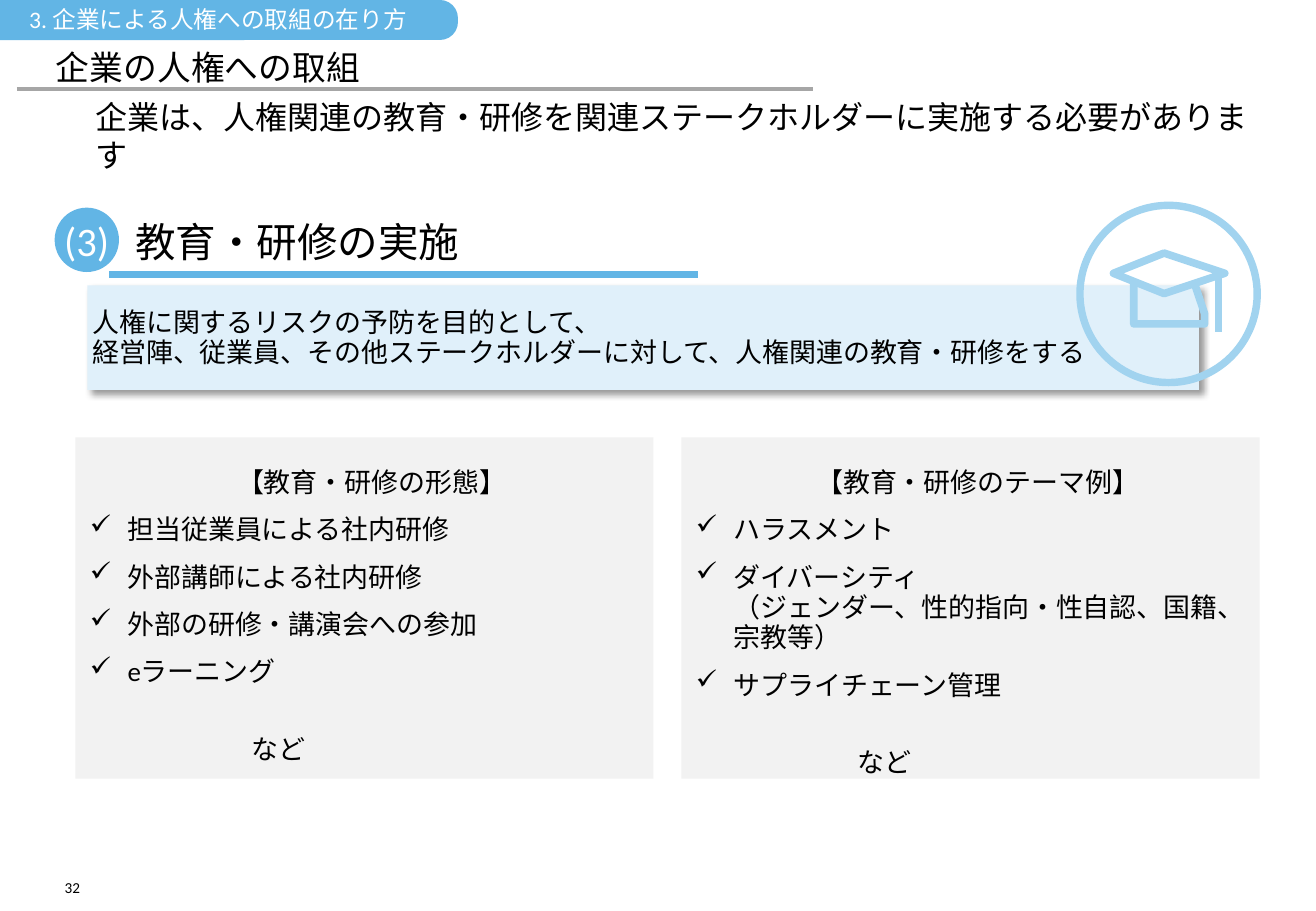
from dataclasses import dataclass
from math import cos, pi, sin

from lxml.etree import SubElement
from pptx import Presentation
from pptx.dml.color import RGBColor
from pptx.enum.shapes import MSO_CONNECTOR, MSO_SHAPE
from pptx.enum.text import MSO_ANCHOR, PP_ALIGN
from pptx.oxml.ns import qn
from pptx.util import Inches, Pt


@dataclass(frozen=True)
class Theme:
    font: str = "Calibri"
    ink: str = "000000"
    white: str = "FFFFFF"
    blue: str = "62B5E5"
    icon: str = "A1D3EF"
    band: str = "E0F0FA"
    panel: str = "F2F2F2"
    rule: str = "A6A6A6"
    page: int = 9
    tab: int = 14
    body: int = 16
    lead: int = 19
    title: int = 20
    heading: int = 24
    leading: int = 18
    gap: int = 10


T = Theme()
COLS, ROWS = 130, 90
PANEL_LEFT, PANEL_PITCH = 7.44, 59.88
PANELS = [
    ("【教育・研修の形態】",
     ["担当従業員による社内研修", "外部講師による社内研修",
      "外部の研修・講演会への参加", "eラーニング"]),
    ("【教育・研修のテーマ例】",
     ["ハラスメント",
      "ダイバーシティ\v（ジェンダー、性的指向・性自認、国籍、宗教等）",
      "サプライチェーン管理"]),
]


def grid(n):
    return Inches(n / 12)


def rgb(value):
    return RGBColor.from_string(value)


def style(p, size, color=T.ink, align=None, leading=None, before=None):
    p.alignment = align
    if leading:
        p.line_spacing = Pt(leading)
    if before:
        p.space_before = Pt(before)
    for r in p.runs:
        r.font.name = T.font
        r.font.size = Pt(size)
        r.font.color.rgb = rgb(color)


def indent(p, left, first=0, bullet=None):
    pPr = p._p.get_or_add_pPr()
    pPr.set("marL", str(grid(left)))
    pPr.set("indent", str(grid(first)))
    if bullet:
        SubElement(pPr, qn("a:buChar")).set("char", bullet)


def frame(sp, inset=0.0, anchor=MSO_ANCHOR.TOP, wrap=True):
    tf = sp.text_frame
    tf.word_wrap = wrap
    tf.vertical_anchor = anchor
    tf.margin_left = tf.margin_right = grid(inset)
    tf.margin_top = tf.margin_bottom = grid(inset)
    return tf


def add_text(s, box, text, size, color=T.ink, align=None, **layout):
    tf = frame(s.shapes.add_textbox(*map(grid, box)), **layout)
    tf.text = text
    style(tf.paragraphs[0], size, color, align)
    return tf


def add_block(s, kind, box, fill, adjust=None):
    sp = s.shapes.add_shape(kind, *map(grid, box))
    sp.shadow.inherit = False
    sp.fill.solid()
    sp.fill.fore_color.rgb = rgb(fill)
    sp.line.fill.background()
    if adjust is not None:
        sp.adjustments[0] = adjust
    return sp


def add_line(s, x1, y1, x2, y2, color, width):
    line = s.shapes.add_connector(MSO_CONNECTOR.STRAIGHT, *map(grid, (x1, y1, x2, y2)))
    line.line.color.rgb = rgb(color)
    line.line.width = Pt(width)
    SubElement(line._element.spPr, qn("a:effectLst"))


def add_outline(s, points, color, width, close):
    fb = s.shapes.build_freeform(*points[0], scale=float(grid(1)))
    fb.add_line_segments(points[1:], close=close)
    sp = fb.convert_to_shape()
    sp.shadow.inherit = False
    sp.fill.background()
    sp.line.color.rgb = rgb(color)
    sp.line.width = Pt(width)


def add_shadow(sp):
    effects = sp._element.spPr.find(qn("a:effectLst"))
    shadow = SubElement(effects, qn("a:outerShdw"), blurRad=str(Pt(4)),
                        dist=str(Pt(3)), dir="2700000", algn="tl", rotWithShape="0")
    color = SubElement(shadow, qn("a:srgbClr"), val=T.ink)
    SubElement(color, qn("a:alpha"), val="40000")


def add_band(s, box, lines):
    sp = add_block(s, MSO_SHAPE.RECTANGLE, box, T.band)
    add_shadow(sp)
    tf = frame(sp, 0.48, MSO_ANCHOR.MIDDLE)
    tf.text = "\n".join(lines)
    for p in tf.paragraphs:
        style(p, T.body, align=PP_ALIGN.LEFT, leading=T.leading)


def add_panel(s, left, title, items):
    sp = add_block(s, MSO_SHAPE.RECTANGLE, (left, 43.2, 57.12, 33.72), T.panel)
    tf = frame(sp)
    tf.margin_left = grid(1.44)
    tf.margin_top = Pt(T.leading)
    tf.text = title
    style(tf.paragraphs[0], T.body, align=PP_ALIGN.CENTER, leading=T.leading)
    for item in items:
        p = tf.add_paragraph()
        p.text = item
        indent(p, 3.72, -3.72, "✓")
        style(p, T.body, align=PP_ALIGN.LEFT, leading=T.leading, before=T.gap)
    p = tf.add_paragraph()
    p.text = "など"
    indent(p, 15.96)
    style(p, T.body, align=PP_ALIGN.LEFT, leading=T.leading, before=T.gap + T.leading)


def add_icon(s):
    cx = 115.38
    board = [(110.1, 27.12), (cx, 25.32), (120.66, 27.12), (cx, 29.4)]
    arc = [pi * (1 - i / 24) for i in range(25)]
    bowl = [(cx + 3.4 * cos(a), 30.96 + 1.44 * sin(a)) for a in arc]
    add_outline(s, board, T.icon, 4.5, True)
    add_outline(s, [(cx - 3.1, 28.5), *bowl, (cx + 3.1, 28.5)], T.icon, 4.5, False)
    add_line(s, 120.36, 27.4, 120.36, 32.76, T.icon, 4.5)
    add_block(s, MSO_SHAPE.DONUT, (106.32, 19.92, 18.24, 18.24), T.icon, 0.04)


def main():
    prs = Presentation()
    prs.slide_width, prs.slide_height = grid(COLS), grid(ROWS)
    s = prs.slides.add_slide(prs.slide_layouts[6])

    add_text(s, (5.52, 86.28, 2.4, 2.28), "32", T.page, align=PP_ALIGN.RIGHT,
             anchor=MSO_ANCHOR.BOTTOM, wrap=False)
    add_text(s, (5.52, 3.96, 119.04, 4.68), "企業の人権への取組", T.title,
             anchor=MSO_ANCHOR.BOTTOM)
    tf = add_text(s, (8.28, 9, 116.16, 5.04),
                  "企業は、人権関連の教育・研修を関連ステークホルダーに実施する必要があります",
                  T.lead, inset=1.2)
    tf.margin_top = tf.margin_bottom = grid(0.6)
    add_line(s, 1.68, 8.76, 80.28, 8.76, T.rule, 2.25)

    add_band(s, (8.64, 28.2, 109.8, 10.32),
             ["人権に関するリスクの予防を目的として、",
              "経営陣、従業員、その他ステークホルダーに対して、人権関連の教育・研修をする"])
    add_text(s, (12.88, 20.88, 56.96, 5.88), "教育・研修の実施", T.heading,
             inset=0.48, anchor=MSO_ANCHOR.MIDDLE)
    badge = add_block(s, MSO_SHAPE.OVAL, (5.4, 20.52, 6.36, 6.36), T.blue)
    tf = frame(badge, anchor=MSO_ANCHOR.MIDDLE, wrap=False)
    tf.text = "(3)"
    style(tf.paragraphs[0], T.heading, T.white, PP_ALIGN.CENTER)
    add_line(s, 10.8, 27.12, 69, 27.12, T.blue, 4.5)

    for i, (title, items) in enumerate(PANELS):
        add_panel(s, PANEL_LEFT + i * PANEL_PITCH, title, items)
    add_icon(s)

    add_block(s, MSO_SHAPE.ROUNDED_RECTANGLE, (-2.64, 0, 47.88, 3.96), T.blue, 0.45)
    tf = add_text(s, (0, 0.24, 44.4, 3.36), "3. 企業による人権への取組の在り方", T.tab,
                  T.white, inset=0.48, anchor=MSO_ANCHOR.MIDDLE)
    indent(tf.paragraphs[0], 0, 2.4)
    prs.save("out.pptx")


if __name__ == "__main__":
    main()
